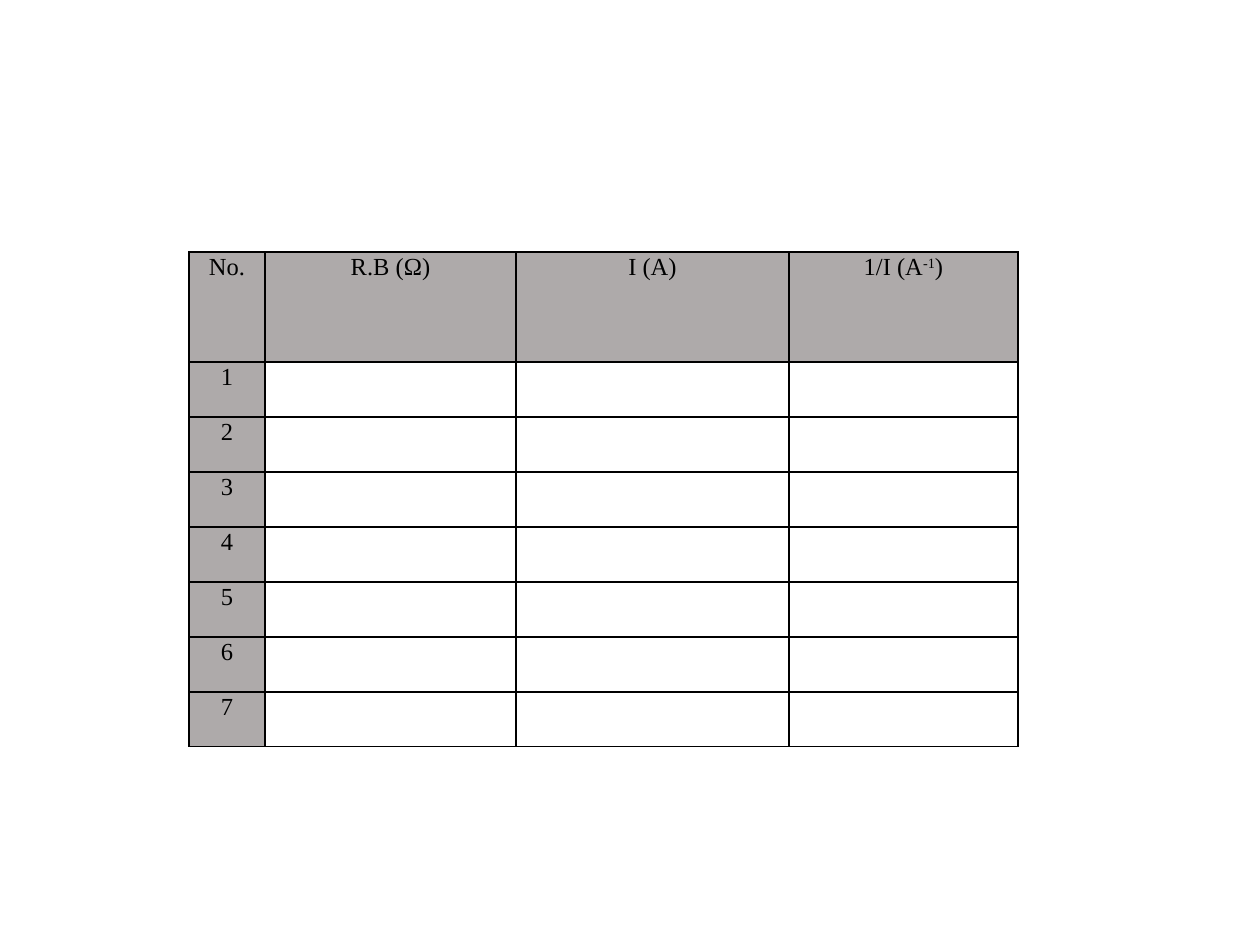
import pptx
import pptx.util
from pptx.dml.color import RGBColor
from pptx.enum.text import PP_ALIGN
from pptx.oxml import parse_xml
from pptx.oxml.ns import nsdecls

PX = 914400 // 126
BLACK = RGBColor(0x00, 0x00, 0x00)
WHITE = RGBColor(0xFF, 0xFF, 0xFF)
GREY = RGBColor(0xAE, 0xAA, 0xAA)

LEFT, TOP = 189, 252
COLUMN_WIDTHS = [76, 251, 273, 229]
HEADER_HEIGHT, ROW_HEIGHT = 110, 55
READINGS = 7
HEADINGS = [["No."], ["R.B (Ω)"], ["I (A)"], ["1/I (A", "-1", ")"]]


def px(length):
    return pptx.util.Emu(length * PX)


def add_borders(cell):
    properties = cell._tc.get_or_add_tcPr()
    for index, side in enumerate(("lnL", "lnR", "lnT", "lnB")):
        properties.insert(index, parse_xml(
            f'<a:{side} {nsdecls("a")} w="12700"><a:solidFill>'
            f'<a:srgbClr val="{BLACK}"/></a:solidFill></a:{side}>'))


def style_cell(cell, color):
    cell.fill.solid()
    cell.fill.fore_color.rgb = color
    cell.margin_left = cell.margin_right = px(9)
    cell.margin_top = cell.margin_bottom = 0
    add_borders(cell)


def write_label(cell, parts):
    para = cell.text_frame.paragraphs[0]
    para.alignment = PP_ALIGN.CENTER
    para.line_spacing = 1.07
    para.font.name = "Times New Roman"
    para.font.size = pptx.util.Pt(14)
    para.font.color.rgb = BLACK
    for index, part in enumerate(parts):
        span = para.add_run()
        span.text = part
        if index == 1:
            span._r.get_or_add_rPr().set("baseline", "30000")


def add_readings_table(page):
    heights = [HEADER_HEIGHT] + [ROW_HEIGHT] * READINGS
    table = page.shapes.add_table(
        len(heights), len(COLUMN_WIDTHS), px(LEFT), px(TOP),
        px(sum(COLUMN_WIDTHS)), px(sum(heights))).table
    table.first_row = table.horz_banding = False
    for column, width in zip(table.columns, COLUMN_WIDTHS):
        column.width = px(width)
    for row, height in zip(table.rows, heights):
        row.height = px(height)
    for row_index in range(len(heights)):
        for column_index, heading in enumerate(HEADINGS):
            cell = table.cell(row_index, column_index)
            is_label = row_index == 0 or column_index == 0
            style_cell(cell, GREY if is_label else WHITE)
            if is_label:
                write_label(cell, [str(row_index)] if row_index else heading)


def main():
    deck = pptx.Presentation()
    deck.slide_width, deck.slide_height = px(1260), px(945)
    page = deck.slides.add_slide(deck.slide_layouts[6])
    add_readings_table(page)
    deck.save("out.pptx")


if __name__ == "__main__":
    main()
